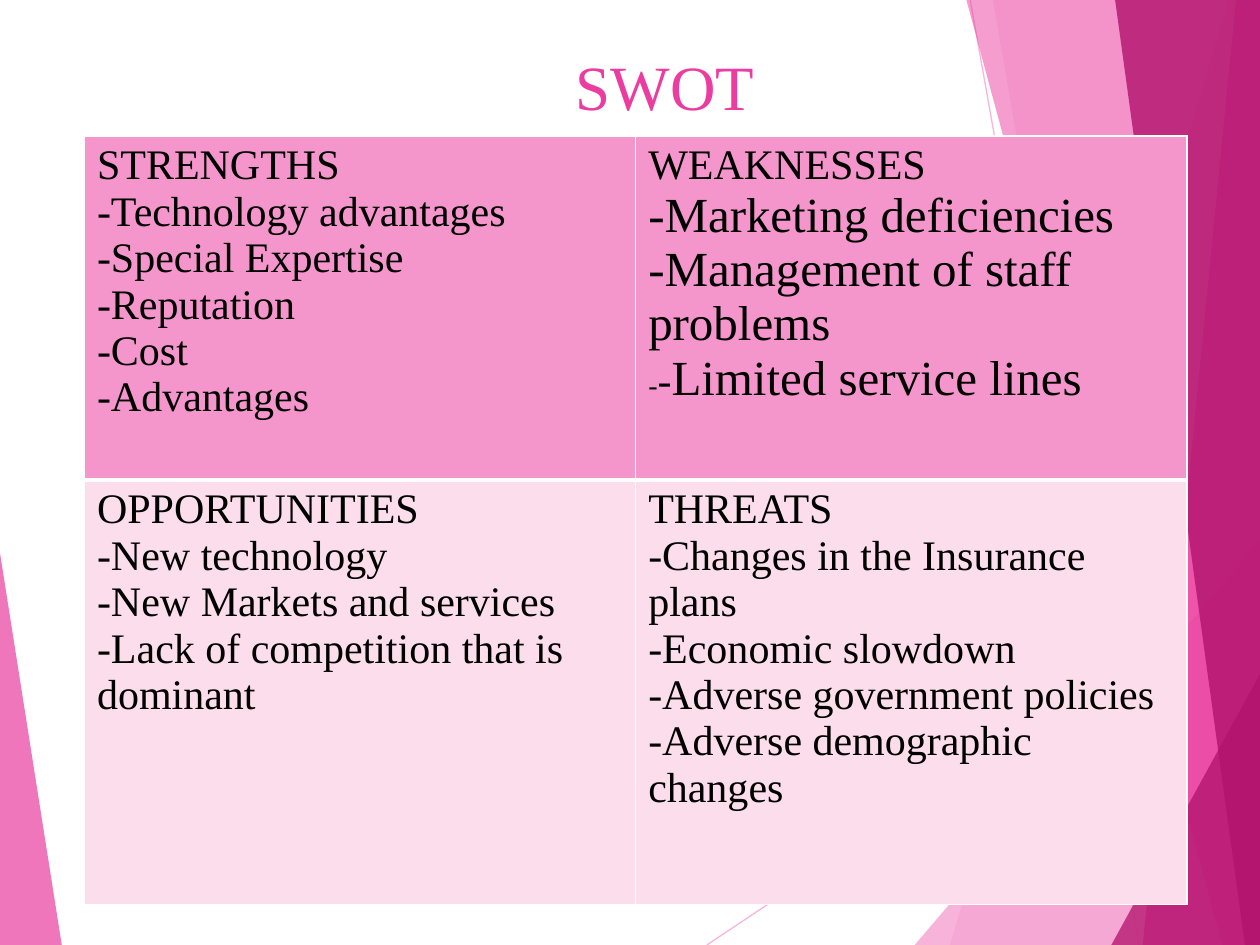
from lxml.etree import SubElement
from pptx import Presentation
from pptx.dml.color import RGBColor
from pptx.enum.shapes import MSO_CONNECTOR as CONN
from pptx.enum.text import MSO_ANCHOR as ANCHOR, PP_ALIGN as ALIGN
from pptx.oxml.ns import qn
from pptx.util import Inches, Pt

W, H = 10, 7.5
FONT = "Times New Roman"
COLORS = {"pink": "F496CB", "magenta": "EB3D9F", "plum": "B2136D",
          "blush": "FBDDEC", "white": "FFFFFF", "black": "000000"}

# Content: a paragraph is a string, or a list of (text, size) runs
TITLE = "SWOT "
BODY_SIZE, BIG_SIZE = 24, 28
SWOT = [
    [["STRENGTHS", "-Technology advantages", "-Special Expertise",
      "-Reputation", "-Cost", "-Advantages"],
     ["WEAKNESSES", [("-Marketing deficiencies", BIG_SIZE)],
      [("-Management of staff problems", BIG_SIZE)],
      [("-", 16), ("-", BODY_SIZE), ("Limited service lines", BIG_SIZE)]]],
    [["OPPORTUNITIES", "-New technology", "-New Markets and services",
      "-Lack of competition that is dominant"],
     ["THREATS", "-Changes in the Insurance plans", "-Economic slowdown",
      "-Adverse government policies", "-Adverse demographic changes"]],
]
ROW_FILLS = ["pink", "blush"]
ROW_HEIGHTS = [2.73, 3.37]
TABLE_LEFT, TABLE_TOP, TABLE_WIDTH = 0.67, 1.08, 8.75

# Background facets: colour, opacity in percent, corners
RAYS = [((5.61, H), (W, 4.57)), ((7.7, 0), (9.04, H))]
FACETS = [
    ("pink", 36, [(9.75, 0), (7.54, H), (W, H), (W, 0)]),
    ("pink", 20, [(7.88, 0), (9.19, H), (W, H), (W, 0)]),
    ("pink", 72, [(7.26, H), (W, 4.29), (W, H)]),
    ("magenta", 50, [(7.67, 0), (9.7, H), (W, H), (W, 0)]),
    ("magenta", 66, [(9.81, 0), (9.07, H), (W, H), (W, 0)]),
    ("plum", 80, [(8.85, 0), (9.88, H), (W, H), (W, 0)]),
    ("plum", 76, [(8.82, H), (W, 5.35), (W, H)]),
    ("magenta", 70, [(0, 4.39), (0.49, H), (0, H)]),
]


def rgb(name):
    return RGBColor.from_string(COLORS[name])


def set_opacity(fill_parent, percent):
    color = next(fill_parent.iter(qn("a:srgbClr")))
    SubElement(color, qn("a:alpha"), val=str(percent * 1000))


def add_ray(start, end):
    line = slide.shapes.add_connector(CONN.STRAIGHT, *map(Inches, start + end))
    line.line.color.rgb = rgb("pink")
    line.line.width = Pt(0.75)
    sp_pr = line._element.spPr
    set_opacity(sp_pr, 70)
    SubElement(sp_pr, qn("a:effectLst"))


def add_facet(color, opacity, corners):
    points = [(Inches(x), Inches(y)) for x, y in corners]
    builder = slide.shapes.build_freeform(*points[0])
    builder.add_line_segments(points[1:], close=True)
    sp = builder.convert_to_shape()
    sp.shadow.inherit = False
    sp.fill.solid()
    sp.fill.fore_color.rgb = rgb(color)
    set_opacity(sp._element.spPr, opacity)
    sp.line.fill.background()


def style_run(r, size, color):
    r.font.name, r.font.size = FONT, Pt(size)
    r.font.color.rgb = rgb(color)


def set_borders(cell, widths):
    tc_pr = cell._tc.get_or_add_tcPr()
    for i, (side, width) in enumerate(widths.items()):
        ln = tc_pr.makeelement(qn(f"a:ln{side}"), {"w": str(Pt(width))})
        fill = SubElement(ln, qn("a:solidFill"))
        SubElement(fill, qn("a:srgbClr"), val=COLORS["white"])
        tc_pr.insert(i, ln)


def fill_cell(cell, paragraphs, color):
    cell.fill.solid()
    cell.fill.fore_color.rgb = rgb(color)
    tf = cell.text_frame
    for i, runs in enumerate(paragraphs):
        p = tf.paragraphs[0] if i == 0 else tf.add_paragraph()
        if isinstance(runs, str):
            runs = [(runs, BODY_SIZE)]
        for text, size in runs:
            r = p.add_run()
            r.text = text
            style_run(r, size, "black")


prs = Presentation()
prs.slide_width, prs.slide_height = Inches(W), Inches(H)
slide = prs.slides.add_slide(prs.slide_layouts[5])

# Background
for ray in RAYS:
    add_ray(*ray)
for facet in FACETS:
    add_facet(*facet)

# Title
title = slide.shapes.title
title.left, title.top, title.width, title.height = map(
    Inches, (TABLE_LEFT, 0.33, W - TABLE_LEFT, 1.06))
tf = title.text_frame
tf.text = TITLE
tf.vertical_anchor = ANCHOR.TOP
p = tf.paragraphs[0]
p.alignment = ALIGN.CENTER
style_run(p.runs[0], 36, "magenta")

# SWOT table
table = slide.shapes.add_table(
    len(SWOT), len(SWOT[0]), Inches(TABLE_LEFT), Inches(TABLE_TOP),
    Inches(TABLE_WIDTH), Inches(sum(ROW_HEIGHTS))).table
table.first_row = table.horz_banding = False
for i, row in enumerate(SWOT):
    table.rows[i].height = Inches(ROW_HEIGHTS[i])
    top, bottom = (1, 3) if i == 0 else (3, 1)
    for j, paragraphs in enumerate(row):
        cell = table.cell(i, j)
        fill_cell(cell, paragraphs, ROW_FILLS[i])
        set_borders(cell, {"L": 1, "R": 1, "T": top, "B": bottom})

prs.save("out.pptx")
